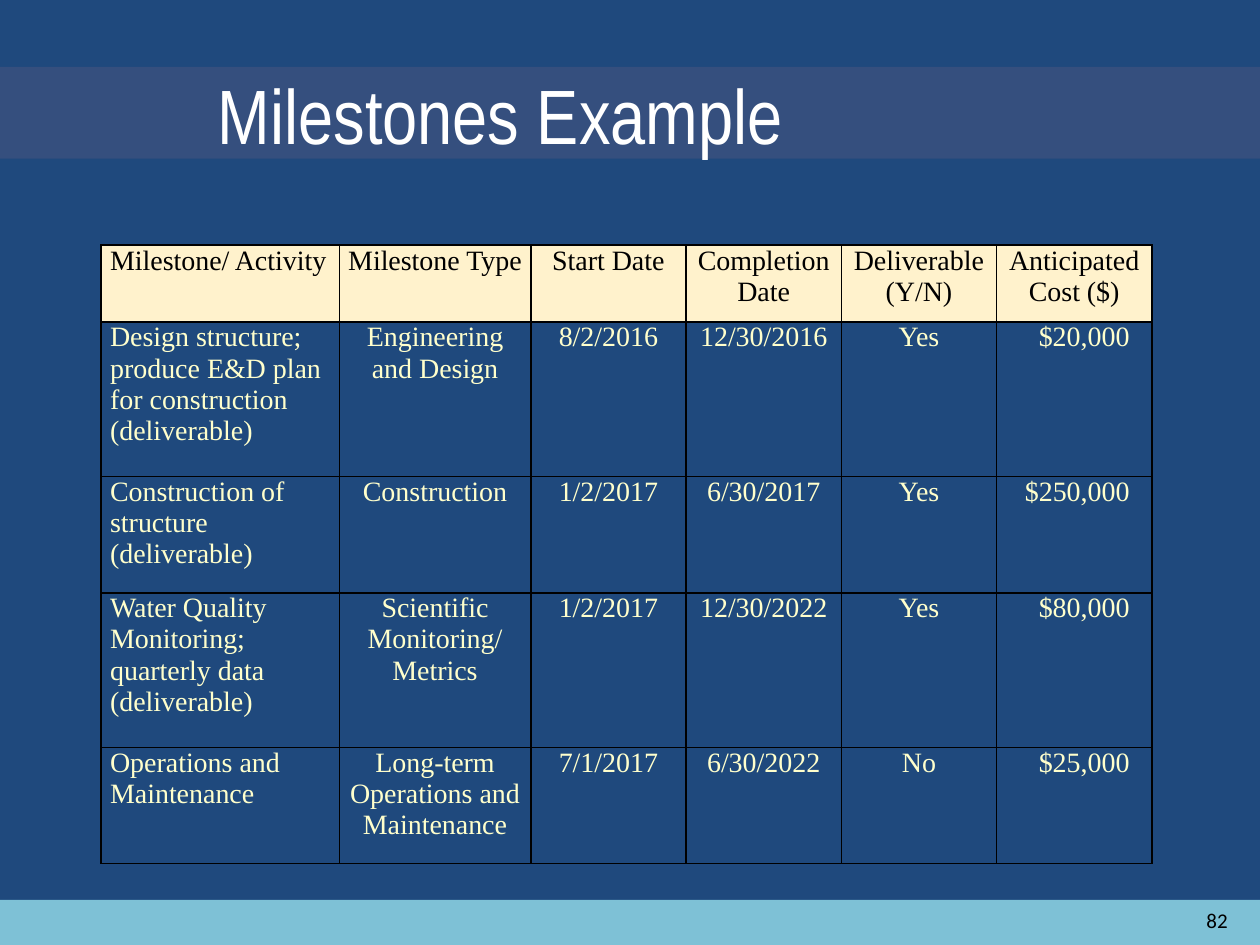
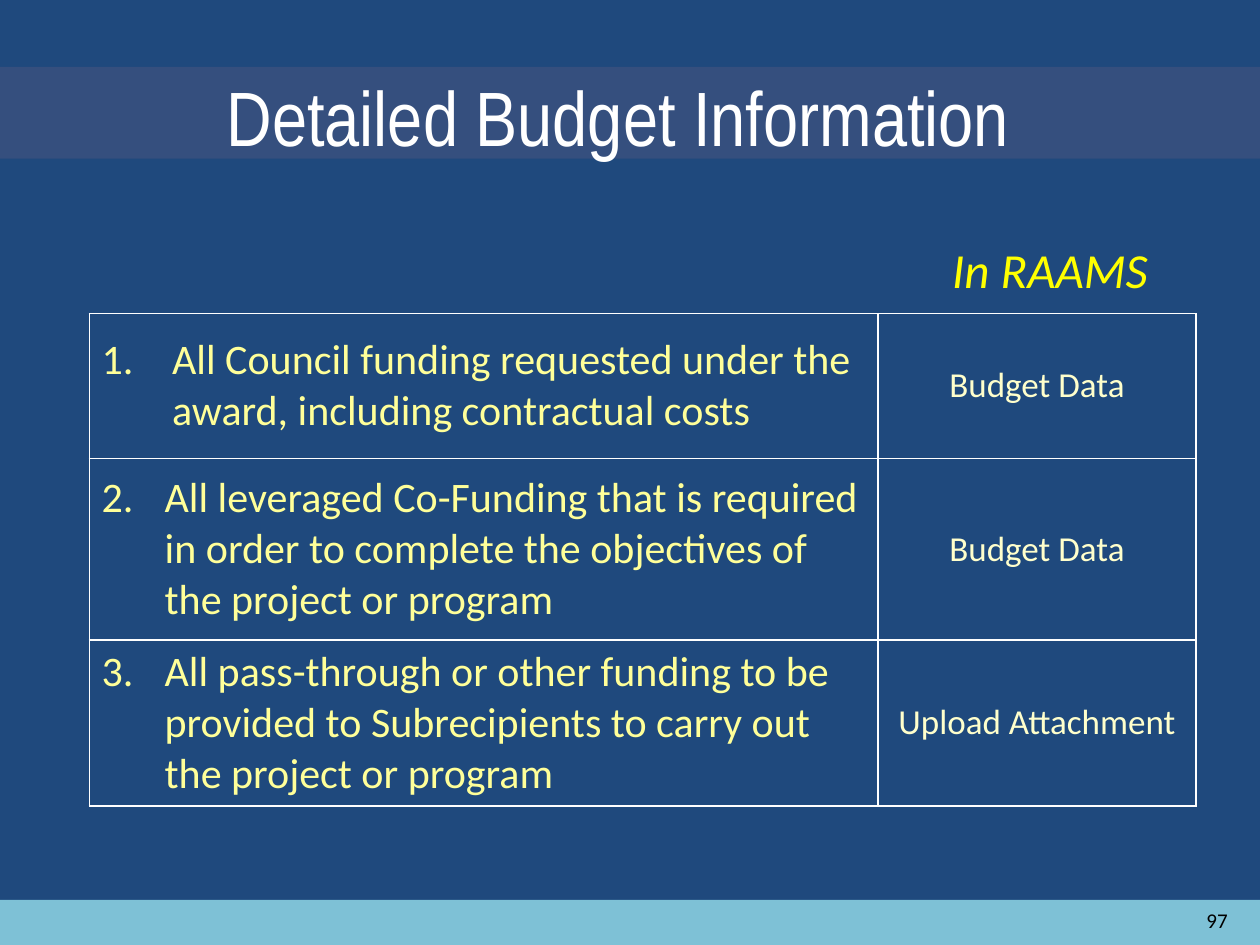
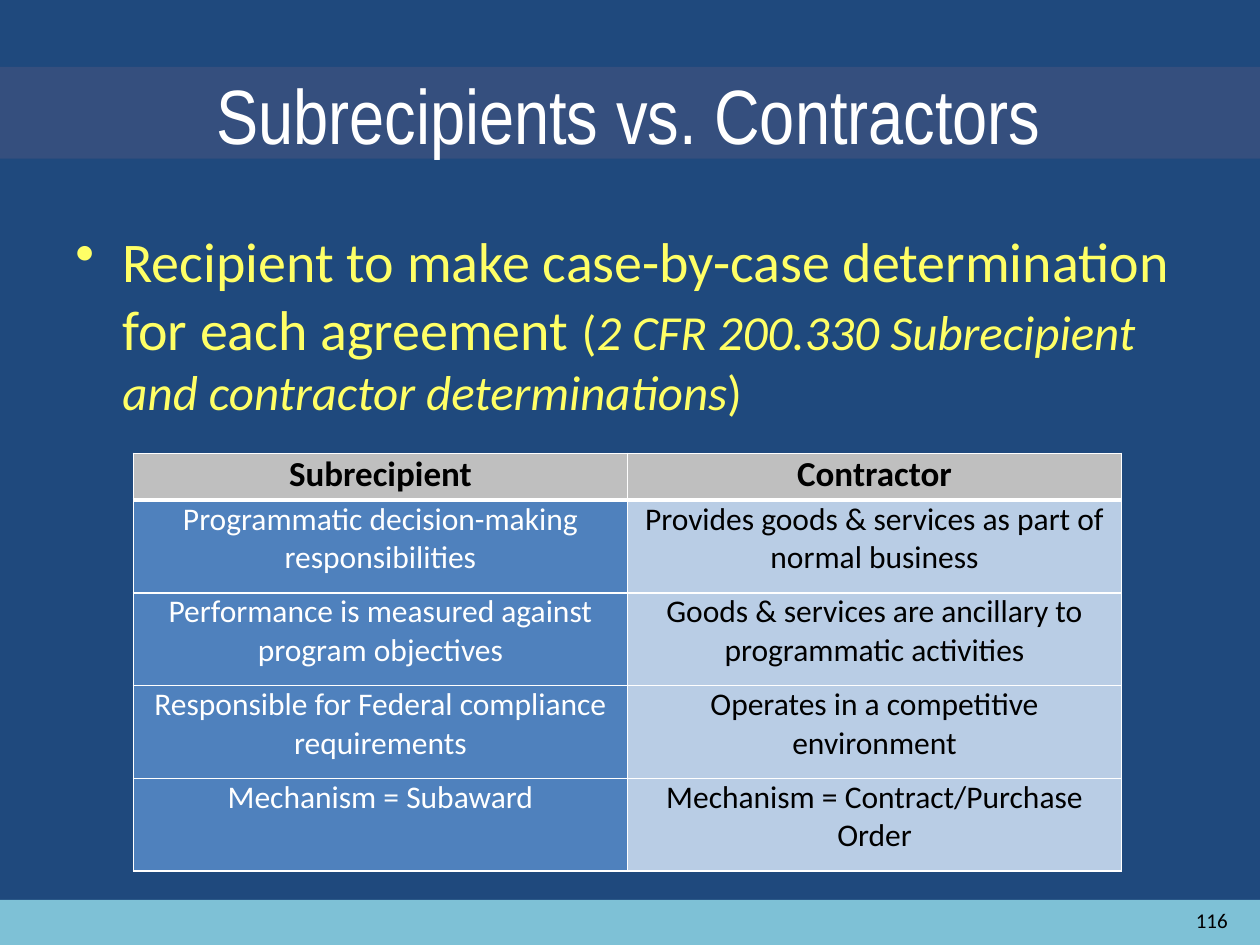
from dataclasses import dataclass, replace

from lxml import etree
from pptx import Presentation
from pptx.dml.color import RGBColor
from pptx.enum.shapes import MSO_SHAPE
from pptx.enum.text import MSO_ANCHOR, PP_ALIGN
from pptx.oxml.ns import qn
from pptx.presentation import Presentation as Deck
from pptx.slide import Slide
from pptx.table import _Cell as Cell
from pptx.text.text import TextFrame, _Paragraph as Paragraph, _Run as Run
from pptx.util import Cm, Pt

RECTANGLE = MSO_SHAPE.RECTANGLE
LEFT, CENTER, RIGHT = PP_ALIGN.LEFT, PP_ALIGN.CENTER, PP_ALIGN.RIGHT
TOP, MIDDLE = MSO_ANCHOR.TOP, MSO_ANCHOR.MIDDLE

NAVY = RGBColor(0x1F, 0x49, 0x7D)
BAND_BLUE = RGBColor(0x39, 0x50, 0x7F)
FOOTER_BLUE = RGBColor(0x7E, 0xC1, 0xD6)
WHITE = RGBColor(0xFF, 0xFF, 0xFF)
BLACK = RGBColor(0x00, 0x00, 0x00)
CREAM = RGBColor(0xFF, 0xF2, 0xCC)
PALE_YELLOW = RGBColor(0xFF, 0xFF, 0xCC)
SOFT_YELLOW = RGBColor(0xFF, 0xFF, 0x99)
WARM_YELLOW = RGBColor(0xFF, 0xFF, 0x66)
BRIGHT_YELLOW = RGBColor(0xFF, 0xFF, 0x00)
GRAY = RGBColor(0xBF, 0xBF, 0xBF)
MID_BLUE = RGBColor(0x4F, 0x81, 0xBD)
LIGHT_BLUE = RGBColor(0xB9, 0xCD, 0xE5)

TITLE_FONT = "Arial Narrow"
BODY_FONT = "Calibri"
TABLE_FONT = "Times New Roman"


@dataclass(frozen=True)
class Area:
    left: float
    top: float
    width: float
    height: float

    def lengths(self) -> tuple[Cm, Cm, Cm, Cm]:
        return Cm(self.left), Cm(self.top), Cm(self.width), Cm(self.height)


@dataclass(frozen=True)
class TextStyle:
    size: float
    color: RGBColor
    font: str = BODY_FONT
    bold: bool = False
    italic: bool = False
    align: PP_ALIGN = LEFT
    anchor: MSO_ANCHOR = TOP


@dataclass(frozen=True)
class CellStyle:
    text: TextStyle
    fill: RGBColor | None = None
    side_margin: float = 0.18
    right_margin: float = 0.18
    end_margin: float = 0
    space_after: float = 0


@dataclass(frozen=True)
class Grid:
    left: float
    top: float
    columns: list[float]
    rows: list[float]
    border: RGBColor
    header_rule: float = 1


FOOTER_BAND = Area(0, 18.14, 25.4, 0.91)
TITLE_BAND = Area(0, 1.35, 25.4, 1.85)
PAGE_NUMBER = Area(19.08, 18.03, 5.92, 1.02)

TITLE_STYLE = TextStyle(44, WHITE, TITLE_FONT, anchor=MIDDLE)
NUMBER_STYLE = TextStyle(12, BLACK, align=RIGHT, anchor=MIDDLE)


def style_run(span: Run, style: TextStyle) -> None:
    span.font.name = style.font
    span.font.size = Pt(style.size)
    span.font.bold = style.bold
    span.font.italic = style.italic
    span.font.color.rgb = style.color


def style_frame(frame: TextFrame, style: TextStyle) -> None:
    for para in frame.paragraphs:
        para.alignment = style.align
        for span in para.runs:
            style_run(span, style)


def hang(para: Paragraph, indent: float, tag: str, **attributes: str) -> None:
    properties = para._p.get_or_add_pPr()
    properties.set("marL", str(Cm(indent)))
    properties.set("indent", str(-Cm(indent)))
    etree.SubElement(properties, qn(tag), attributes)


def add_band(page: Slide, area: Area, color: RGBColor, opacity: int = 100) -> None:
    band = page.shapes.add_shape(RECTANGLE, *area.lengths())
    band.shadow.inherit = False
    band.fill.solid()
    band.fill.fore_color.rgb = color
    band.line.fill.background()
    if opacity < 100:
        paint = band._element.spPr.find(".//" + qn("a:srgbClr"))
        etree.SubElement(paint, qn("a:alpha"), val=str(opacity * 1000))


def add_text(page: Slide, area: Area, text: str, style: TextStyle) -> TextFrame:
    frame = page.shapes.add_textbox(*area.lengths()).text_frame
    frame.word_wrap = True
    frame.vertical_anchor = style.anchor
    frame.text = text
    style_frame(frame, style)
    return frame


def add_page(deck: Deck, title: str, title_area: Area, number: int) -> Slide:
    page = deck.slides.add_slide(deck.slide_layouts[6])
    add_band(page, FOOTER_BAND, FOOTER_BLUE)
    add_band(page, TITLE_BAND, BAND_BLUE, opacity=87)
    add_text(page, title_area, title, TITLE_STYLE)
    add_text(page, PAGE_NUMBER, str(number), NUMBER_STYLE)
    return page


def draw_borders(cell: Cell, color: RGBColor, top: float, bottom: float) -> None:
    properties = cell._tc.get_or_add_tcPr()
    widths = {"a:lnL": 1, "a:lnR": 1, "a:lnT": top, "a:lnB": bottom}
    for position, (tag, width) in enumerate(widths.items()):
        line = etree.Element(qn(tag), w=str(Pt(width)))
        paint = etree.SubElement(line, qn("a:solidFill"))
        etree.SubElement(paint, qn("a:srgbClr"), val=str(color))
        properties.insert(position, line)


def fill_cell(cell: Cell, text: str, style: CellStyle) -> None:
    cell.text_frame.text = text
    cell.vertical_anchor = style.text.anchor
    cell.margin_left = Cm(style.side_margin)
    cell.margin_right = Cm(style.right_margin)
    cell.margin_top = cell.margin_bottom = Cm(style.end_margin)
    if style.fill is None:
        cell.fill.background()
    else:
        cell.fill.solid()
        cell.fill.fore_color.rgb = style.fill
    style_frame(cell.text_frame, style.text)
    if style.space_after:
        cell.text_frame.paragraphs[0].space_after = Pt(style.space_after)


def add_grid(page: Slide, grid: Grid, texts: list[list[str]],
             header: list[CellStyle], body: list[CellStyle]) -> list[list[Cell]]:
    area = Area(grid.left, grid.top, sum(grid.columns), sum(grid.rows))
    table = page.shapes.add_table(len(grid.rows), len(grid.columns), *area.lengths()).table
    table.first_row = table.horz_banding = False
    for column, width in zip(table.columns, grid.columns):
        column.width = Cm(width)
    for row, height in zip(table.rows, grid.rows):
        row.height = Cm(height)
    cells = [list(row.cells) for row in table.rows]
    for index, (row_cells, row_texts) in enumerate(zip(cells, texts)):
        top = grid.header_rule if index == 1 else 1
        bottom = grid.header_rule if index == 0 else 1
        for cell, text, style in zip(row_cells, row_texts, body if index else header):
            fill_cell(cell, text, style)
            draw_borders(cell, grid.border, top, bottom)
    return cells


def build_milestones(deck: Deck) -> None:
    page = add_page(deck, "Milestones Example", Area(4.14, 0.71, 13.23, 3.18), 82)
    texts = [
        ["Milestone/ Activity", "Milestone Type", "Start Date", "Completion Date",
         "Deliverable (Y/N)", "Anticipated Cost ($)"],
        ["Design structure; produce E&D plan for construction (deliverable)",
         "Engineering and Design", "8/2/2016", "12/30/2016", "Yes", "$20,000"],
        ["Construction of structure (deliverable)",
         "Construction", "1/2/2017", "6/30/2017", "Yes", "$250,000"],
        ["Water Quality Monitoring; quarterly data (deliverable)",
         "Scientific Monitoring/ Metrics", "1/2/2017", "12/30/2022", "Yes", "$80,000"],
        ["Operations and Maintenance",
         "Long-term Operations and Maintenance", "7/1/2017", "6/30/2022", "No", "$25,000"],
    ]
    heading = TextStyle(16, BLACK, TABLE_FONT)
    entry = TextStyle(16, PALE_YELLOW, TABLE_FONT)
    header = [CellStyle(replace(heading, align=align), CREAM) for align in [LEFT] + [CENTER] * 5]
    body = [CellStyle(replace(entry, align=align)) for align in [LEFT] + [CENTER] * 4]
    body.append(CellStyle(replace(entry, align=RIGHT), right_margin=0.45))
    grid = Grid(2.04, 4.94, [4.8, 3.86] + [3.13] * 4, [1.55, 3.12, 2.34, 3.12, 2.34], BLACK)
    add_grid(page, grid, texts, header, body)


def build_budget(deck: Deck) -> None:
    page = add_page(deck, "Detailed Budget Information", Area(4.32, 0.74, 18.67, 3.18), 97)
    caption = TextStyle(28, BRIGHT_YELLOW, italic=True, align=RIGHT)
    add_text(page, Area(0.43, 4.7, 22.96, 12.57), "In RAAMS", caption)
    texts = [
        ["All Council funding requested under the award, including contractual costs",
         "Budget Data"],
        ["All leveraged Co-Funding that is required in order to complete the objectives of "
         "the project or program", "Budget Data"],
        ["All pass-through or other funding to be provided to Subrecipients to carry out "
         "the project or program", "Upload Attachment"],
    ]
    item = TextStyle(24, SOFT_YELLOW, anchor=MIDDLE)
    place = TextStyle(20, PALE_YELLOW, align=CENTER, anchor=MIDDLE)
    styles = [CellStyle(text, side_margin=0.25, right_margin=0.25, end_margin=0.13)
              for text in (item, place)]
    grid = Grid(1.8, 6.32, [15.9, 6.41], [2.92, 3.66, 3.35], WHITE)
    cells = add_grid(page, grid, texts, styles, styles)
    for number, row in enumerate(cells, start=1):
        indent = 1.42 if number == 1 else 1.27
        hang(row[0].text_frame.paragraphs[0], indent, "a:buAutoNum",
             type="arabicPeriod", startAt=str(number))


def build_comparison(deck: Deck) -> None:
    page = add_page(deck, "Subrecipients vs. Contractors", Area(4.11, 0.71, 21.29, 3.18), 116)
    statement = TextStyle(32, WARM_YELLOW)
    note = replace(statement, size=28)
    frame = add_text(page, Area(1.27, 4.45, 22.86, 13.59),
                     "Recipient to make case-by-case determination for each agreement ", statement)
    para = frame.paragraphs[0]
    hang(para, 0.95, "a:buChar", char="•")
    citation = "2 CFR 200.330 Subrecipient and contractor determinations"
    for text, italic in (("(", False), (citation, True), (")", False)):
        span = para.add_run()
        span.text = text
        style_run(span, replace(note, italic=italic))
    texts = [
        ["Subrecipient", "Contractor"],
        ["Programmatic decision-making responsibilities",
         "Provides goods & services as part of normal business"],
        ["Performance is measured against program objectives",
         "Goods & services are ancillary to programmatic activities"],
        ["Responsible for Federal compliance requirements",
         "Operates in a competitive environment"],
        ["Mechanism = Subaward", "Mechanism = Contract/Purchase Order"],
    ]
    heading = TextStyle(20, BLACK, bold=True, align=CENTER)
    header = [CellStyle(heading, GRAY, space_after=3)] * 2
    body = [CellStyle(TextStyle(18, color, align=CENTER), fill, space_after=3)
            for color, fill in ((WHITE, MID_BLUE), (BLACK, LIGHT_BLUE))]
    grid = Grid(2.69, 9.14, [9.96] * 2, [0.94] + [1.87] * 4, WHITE, header_rule=3)
    add_grid(page, grid, texts, header, body)


def main() -> None:
    deck = Presentation()
    deck.slide_width, deck.slide_height = Cm(25.4), Cm(19.05)
    backdrop = deck.slide_master.background.fill
    backdrop.solid()
    backdrop.fore_color.rgb = NAVY
    build_milestones(deck)
    build_budget(deck)
    build_comparison(deck)
    deck.save("out.pptx")


if __name__ == "__main__":
    main()
